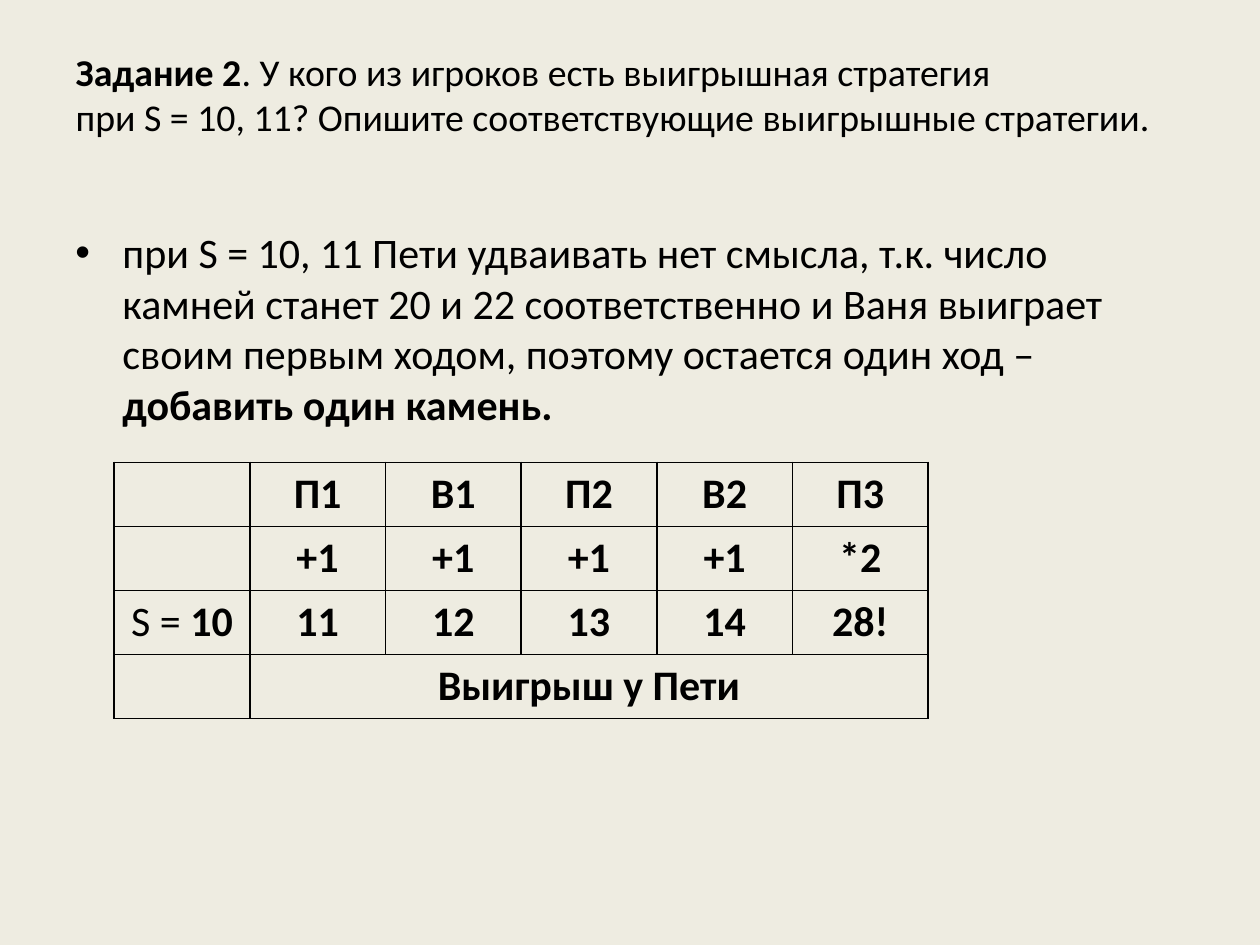
from lxml import etree
from pptx import Presentation
from pptx.dml.color import RGBColor
from pptx.enum import text
from pptx.oxml import ns
from pptx.util import Cm, Pt

BACKGROUND = RGBColor(0xEE, 0xEC, 0xE1)
INK = RGBColor(0x00, 0x00, 0x00)
FONT = "Calibri"
TITLE_SIZE = 21.6
TEXT_SIZE = 24

TITLE = [
    ("Задание 2", True),
    (". У кого из игроков есть выигрышная стратегия \n"
     "при S = 10, 11? Опишите соответствующие выигрышные стратегии.", False),
]
EXPLANATION = [
    ("при S = 10, 11 Пети удваивать нет смысла, т.к. число камней станет "
     "20 и 22 соответственно и Ваня выиграет своим первым ходом, поэтому "
     "остается один ход – ", False),
    ("добавить один камень.", True),
]
MOVES = [
    ["", "П1", "В1", "П2", "В2", "П3"],
    ["", "+1", "+1", "+1", "+1", "*2"],
    [[("S = ", False), ("10", True)], "11", "12", "13", "14", "28!"],
    ["", "Выигрыш у Пети", "", "", "", ""],
]


def write(paragraph, content, size=TEXT_SIZE, align=text.PP_ALIGN.LEFT):
    """Write a bold string or a list of (text, bold) pairs; newlines become breaks."""
    paragraph.alignment = align
    pieces = [(content, True)] if isinstance(content, str) else content
    for piece, bold in pieces:
        for number, line in enumerate(piece.split("\n")):
            if number:
                paragraph.add_line_break()
            run = paragraph.add_run()
            run.text = line
            run.font.name = FONT
            run.font.size = Pt(size)
            run.font.bold = bold
            run.font.color.rgb = INK


def set_bullet(paragraph, indent):
    properties = paragraph._p.get_or_add_pPr()
    properties.set("marL", str(indent))
    properties.set("indent", str(-indent))
    etree.SubElement(properties, ns.qn("a:buFont"), typeface="Arial")
    etree.SubElement(properties, ns.qn("a:buChar"), char="•")


def set_borders(cell, width=Pt(1)):
    properties = cell._tc.get_or_add_tcPr()
    for side in ("lnL", "lnR", "lnT", "lnB"):
        line = etree.SubElement(properties, ns.qn(f"a:{side}"), w=str(width))
        fill = etree.SubElement(line, ns.qn("a:solidFill"))
        etree.SubElement(fill, ns.qn("a:srgbClr"), val=str(INK))


def add_title(slide):
    title = slide.shapes.title
    title.left, title.top = Cm(1.27), Cm(0.76)
    title.width, title.height = Cm(22.86), Cm(3.18)
    frame = title.text_frame
    frame.word_wrap = True
    frame.auto_size = text.MSO_AUTO_SIZE.NONE
    frame.vertical_anchor = text.MSO_ANCHOR.MIDDLE
    frame.margin_bottom = Cm(1.04)
    write(frame.paragraphs[0], TITLE, size=TITLE_SIZE)


def add_explanation(slide):
    box = slide.shapes.add_textbox(Cm(1.27), Cm(4.45), Cm(22.86), Cm(4.88))
    box.text_frame.word_wrap = True
    paragraph = box.text_frame.paragraphs[0]
    write(paragraph, EXPLANATION)
    set_bullet(paragraph, Cm(0.95))


def add_moves_table(slide):
    row_height = Cm(1.29)
    frame = slide.shapes.add_table(
        len(MOVES), len(MOVES[0]), Cm(2.3), Cm(9.32),
        Cm(16.41), row_height * len(MOVES))
    table = frame.table
    table.first_row = table.horz_banding = False
    for row, contents in zip(table.rows, MOVES):
        row.height = row_height
        for cell, content in zip(row.cells, contents):
            set_borders(cell)
            cell.fill.background()
            if content:
                write(cell.text_frame.paragraphs[0], content,
                      align=text.PP_ALIGN.CENTER)
    last = len(MOVES) - 1
    table.cell(last, 1).merge(table.cell(last, len(MOVES[0]) - 1))


def main():
    presentation = Presentation()
    presentation.slide_width, presentation.slide_height = Cm(25.4), Cm(19.05)
    title_only = presentation.slide_layouts.get_by_name("Title Only")
    slide = presentation.slides.add_slide(title_only)
    slide.background.fill.solid()
    slide.background.fill.fore_color.rgb = BACKGROUND
    add_title(slide)
    add_explanation(slide)
    add_moves_table(slide)
    presentation.save("out.pptx")


if __name__ == "__main__":
    main()
